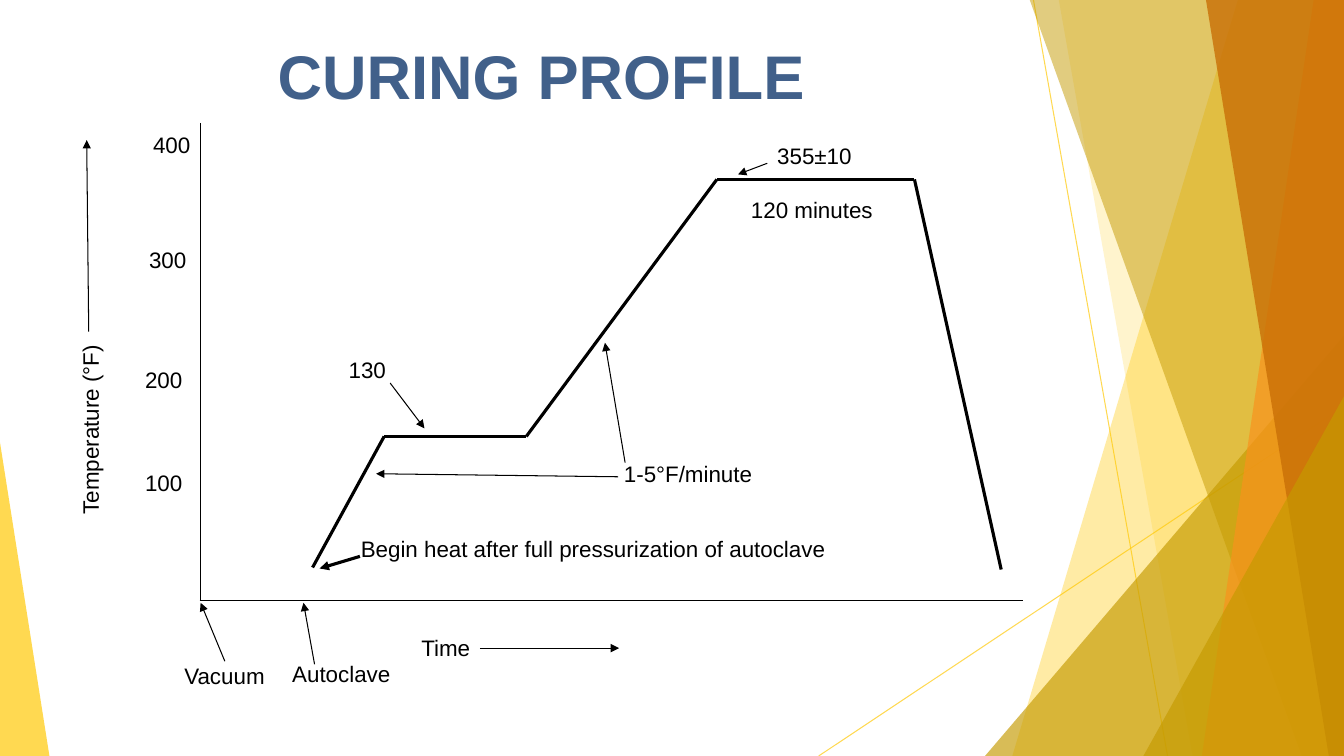
from dataclasses import dataclass
from typing import Tuple

from lxml.etree import SubElement
from pptx import Presentation
from pptx.dml.color import RGBColor
from pptx.enum.shapes import MSO_CONNECTOR as Connector
from pptx.enum.shapes import MSO_SHAPE as Shape
from pptx.enum.text import MSO_ANCHOR as Anchor
from pptx.enum.text import MSO_AUTO_SIZE as AutoSize
from pptx.enum.text import PP_ALIGN as Align
from pptx.oxml.ns import qn
from pptx.util import Inches, Pt

Point = Tuple[float, float]
PAGE_WIDTH, PAGE_HEIGHT = 13.33, 7.5
FACET_TOP = -0.01
LABEL_HEIGHT = 0.37


@dataclass(frozen=True)
class Theme:
    font: str = "Arial"
    title_size: float = 44
    label_size: float = 16
    thin: float = 0.75
    thick: float = 2.25
    ink: str = "000000"
    title: str = "41608A"
    yellow: str = "FFCA08"
    gold: str = "C59A00"
    orange: str = "F8931D"
    brown: str = "C96F06"


THEME = Theme()


@dataclass(frozen=True)
class Facet:
    top_x: float
    bottom_x: float
    color: str
    opacity: int


@dataclass(frozen=True)
class Wedge:
    left: float
    top: float
    width: float
    apex: float
    color: str
    opacity: int


@dataclass(frozen=True)
class Stroke:
    start: Point
    end: Point
    width: float = THEME.thin
    arrow: bool = False
    color: str = THEME.ink
    opacity: int = 100


@dataclass(frozen=True)
class Label:
    text: str
    left: float
    top: float
    width: float
    rotation: float = 0


BACKDROP = [
    Stroke((10.25, 0), (11.58, PAGE_HEIGHT), color=THEME.yellow, opacity=70),
    Stroke((PAGE_WIDTH, 4.03), (8.12, PAGE_HEIGHT), color=THEME.yellow, opacity=70),
    Facet(12.28, 10.04, THEME.yellow, 36),
    Facet(10.5, 11.83, THEME.yellow, 20),
    Wedge(9.77, 3.33, 3.56, 1, THEME.gold, 66),
    Facet(10.21, 12.91, THEME.gold, 50),
    Facet(13.03, 11.92, THEME.orange, 70),
    Facet(11.96, 13.18, THEME.brown, 80),
    Wedge(11.34, 3.93, 1.99, 1, THEME.gold, 66),
    Wedge(0, 4.39, 0.49, 0, THEME.yellow, 70),
]
AXES = [
    Stroke((1.99, 1.22), (1.99, 5.96)),
    Stroke((1.98, 5.96), (10.15, 5.96)),
]
CURE_CURVE = [(3.1, 5.63), (3.81, 4.33), (5.22, 4.33),
              (7.11, 1.78), (9.07, 1.78), (9.93, 5.65)]
ARROWS = [
    Stroke((0.88, 3.29), (0.86, 1.39), arrow=True),
    Stroke((4.76, 6.43), (6.14, 6.43), arrow=True),
    Stroke((3.57, 5.52), (3.17, 5.64), THEME.thick, arrow=True),
    Stroke((2.23, 6.56), (1.99, 5.98), arrow=True),
    Stroke((3.87, 3.8), (4.21, 4.25), arrow=True),
    Stroke((7.61, 1.62), (7.32, 1.73), arrow=True),
    Stroke((6.2, 4.59), (6, 3.4), arrow=True),
    Stroke((6.13, 4.73), (3.73, 4.7), arrow=True),
    Stroke((3.12, 6.59), (3.01, 5.98), arrow=True),
]
LABELS = [
    Label("Temperature (°F)", -0.06, 4.06, 1.91, 270),
    Label("Time", 4.08, 6.24, 0.69),
    Label("100", 1.34, 4.61, 0.57),
    Label("200", 1.34, 3.58, 0.57),
    Label("300", 1.38, 2.39, 0.57),
    Label("400", 1.42, 1.25, 0.57),
    Label("Begin heat after full pressurization of autoclave", 3.48, 5.26, 4.82),
    Label("130", 3.36, 3.48, 0.57),
    Label("355±10", 7.61, 1.36, 0.94),
    Label("120 minutes", 7.35, 1.9, 1.41),
    Label("1-5°F/minute", 6.09, 4.52, 1.49),
    Label("Vacuum", 1.73, 6.52, 1.02),
    Label("Autoclave", 2.8, 6.5, 1.18),
]


def paint(fill, color: str, opacity: int, element) -> None:
    fill.solid()
    fill.fore_color.rgb = RGBColor.from_string(color)
    if opacity < 100:
        tone = next(element.iter(qn("a:srgbClr")))
        SubElement(tone, qn("a:alpha")).set("val", str(opacity * 1000))


def finish_area(shape, color: str, opacity: int) -> None:
    shape.shadow.inherit = False
    shape.line.fill.background()
    paint(shape.fill, color, opacity, shape.element.spPr)


def draw_facet(page, facet: Facet) -> None:
    corners = [(PAGE_WIDTH, FACET_TOP), (PAGE_WIDTH, PAGE_HEIGHT), (facet.bottom_x, PAGE_HEIGHT)]
    builder = page.shapes.build_freeform(Inches(facet.top_x), Inches(FACET_TOP))
    builder.add_line_segments([(Inches(x), Inches(y)) for x, y in corners], close=True)
    finish_area(builder.convert_to_shape(), facet.color, facet.opacity)


def draw_wedge(page, wedge: Wedge) -> None:
    shape = page.shapes.add_shape(
        Shape.ISOSCELES_TRIANGLE, Inches(wedge.left), Inches(wedge.top),
        Inches(wedge.width), Inches(PAGE_HEIGHT - wedge.top))
    shape.adjustments[0] = wedge.apex
    finish_area(shape, wedge.color, wedge.opacity)


def draw_stroke(page, stroke: Stroke) -> None:
    ends = [Inches(value) for value in stroke.start + stroke.end]
    line = page.shapes.add_connector(Connector.STRAIGHT, *ends)
    line.line.width = Pt(stroke.width)
    properties = line.element.spPr
    paint(line.line.fill, stroke.color, stroke.opacity, properties)
    if stroke.arrow:
        SubElement(properties.find(qn("a:ln")), qn("a:tailEnd")).set("type", "triangle")
    SubElement(properties, qn("a:effectLst"))


def add_span(para, text: str, size: float, color: str, bold: bool = False) -> None:
    span = para.add_run()
    span.text = text
    span.font.name = THEME.font
    span.font.size = Pt(size)
    span.font.bold = bold
    span.font.color.rgb = RGBColor.from_string(color)


def draw_label(page, label: Label) -> None:
    box = page.shapes.add_textbox(Inches(label.left), Inches(label.top),
                                  Inches(label.width), Inches(LABEL_HEIGHT))
    box.rotation = label.rotation
    box.text_frame.word_wrap = False
    box.text_frame.auto_size = AutoSize.SHAPE_TO_FIT_TEXT
    add_span(box.text_frame.paragraphs[0], label.text, THEME.label_size, THEME.ink)


def write_title(page, text: str) -> None:
    title = page.shapes.title
    title.left, title.top = Inches(0.27), Inches(0.31)
    title.width, title.height = Inches(10.2), Inches(0.86)
    frame = title.text_frame
    frame.word_wrap = True
    frame.auto_size = AutoSize.NONE
    frame.vertical_anchor = Anchor.MIDDLE
    para = frame.paragraphs[0]
    para.alignment = Align.CENTER
    add_span(para, text, THEME.title_size, THEME.title, bold=True)


def main() -> None:
    deck = Presentation()
    deck.slide_width, deck.slide_height = Inches(PAGE_WIDTH), Inches(PAGE_HEIGHT)
    page = deck.slides.add_slide(deck.slide_layouts[5])
    write_title(page, "CURING PROFILE")
    curve = [Stroke(start, end, THEME.thick) for start, end in zip(CURE_CURVE, CURE_CURVE[1:])]
    painters = {Facet: draw_facet, Wedge: draw_wedge, Stroke: draw_stroke, Label: draw_label}
    for item in BACKDROP + AXES + curve + ARROWS + LABELS:
        painters[type(item)](page, item)
    deck.save("out.pptx")


if __name__ == "__main__":
    main()
